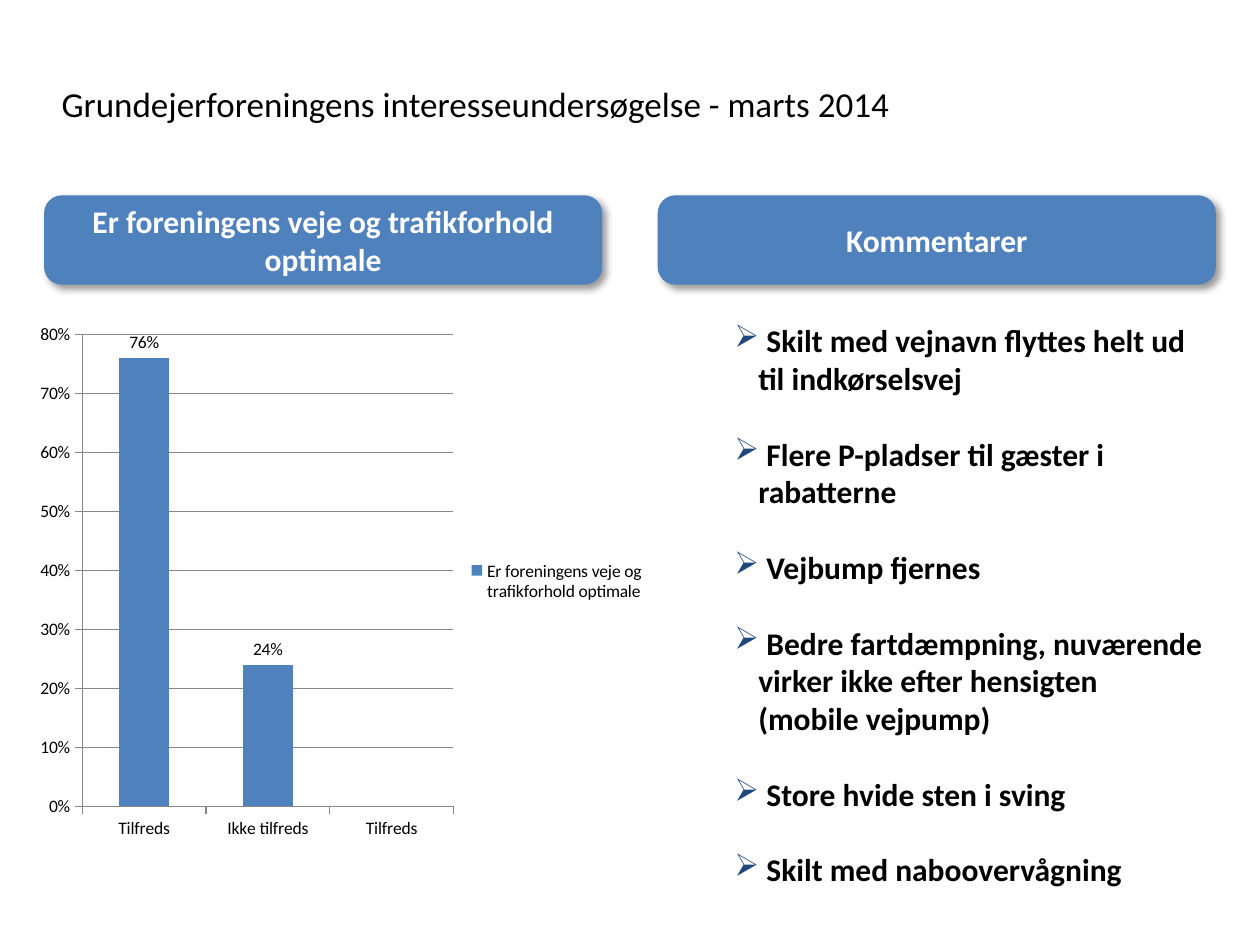
"""Build a survey slide with a column chart and a list of comments."""
from lxml.etree import SubElement
from pptx import Presentation
from pptx.chart.data import CategoryChartData
from pptx.dml.color import RGBColor
from pptx.enum.chart import XL_CHART_TYPE, XL_LABEL_POSITION, XL_LEGEND_POSITION, XL_TICK_MARK
from pptx.enum.shapes import MSO_SHAPE
from pptx.enum.text import MSO_ANCHOR, PP_ALIGN
from pptx.oxml.ns import qn
from pptx.util import Inches, Pt

TITLE = "Grundejerforeningens interesseundersøgelse - marts 2014"
QUESTION = "Er foreningens veje og trafikforhold optimale"
HEADINGS = [QUESTION, "Kommentarer"]
COMMENTS = [
    "Skilt med vejnavn flyttes helt ud til indkørselsvej",
    "Flere P-pladser til gæster i rabatterne",
    "Vejbump fjernes",
    "Bedre fartdæmpning, nuværende virker ikke efter hensigten (mobile vejpump)",
    "Store hvide sten i sving",
    "Skilt med naboovervågning",
]
ANSWERS = [("Tilfreds", 0.76), ("Ikke tilfreds", 0.24), ("Tilfreds", None)]
BLUE, NAVY, GRAY, BLACK, WHITE = "4F81BD", "1F497D", "878787", "000000", "FFFFFF"
HEADING_LEFT, HEADING_STEP = 0.35, 4.87


def rgb(color):
    """Turn a hex string into a colour."""
    return RGBColor.from_string(color)


def style(font, color=BLACK, **values):
    """Set font attributes and colour."""
    for name, value in {"name": "Calibri", **values}.items():
        setattr(font, name, value)
    font.color.rgb = rgb(color)


def add_text(slide, box, anchor=MSO_ANCHOR.TOP):
    """Add a wrapping text box and return its text frame."""
    tf = slide.shapes.add_textbox(*map(Inches, box)).text_frame
    tf.word_wrap = True
    tf.vertical_anchor = anchor
    return tf


def add_bullet(p):
    """Give a paragraph a hanging arrow bullet."""
    pPr = p._p.get_or_add_pPr()
    pPr.set("marL", str(Inches(0.19)))
    pPr.set("indent", str(-Inches(0.19)))
    SubElement(SubElement(pPr, qn("a:buClr")), qn("a:srgbClr"), val=NAVY)
    SubElement(pPr, qn("a:buChar"), char="➢")


def add_shadow(sp):
    """Give a shape a soft shadow to the lower right."""
    effects = SubElement(sp._element.spPr, qn("a:effectLst"))
    shadow = SubElement(effects, qn("a:outerShdw"), blurRad=str(Pt(4)), dist=str(Pt(3)),
                        dir="2700000", algn="tl", rotWithShape="0")
    SubElement(SubElement(shadow, qn("a:srgbClr"), val=BLACK), qn("a:alpha"), val="40000")


def add_heading(slide, left, text):
    """Add a rounded heading bar."""
    box = map(Inches, (left, 1.55, 4.43, 0.71))
    sp = slide.shapes.add_shape(MSO_SHAPE.ROUNDED_RECTANGLE, *box)
    sp.adjustments[0] = 0.2
    sp.fill.solid()
    sp.fill.fore_color.rgb = rgb(BLUE)
    sp.line.fill.background()
    add_shadow(sp)
    tf = sp.text_frame
    tf.word_wrap = True
    tf.vertical_anchor = MSO_ANCHOR.MIDDLE
    for side in ("left", "top", "right", "bottom"):
        setattr(tf, f"margin_{side}", Inches(0.04))
    p = tf.paragraphs[0]
    p.alignment = PP_ALIGN.CENTER
    r = p.add_run()
    r.text = text
    style(r.font, WHITE, size=Pt(18), bold=True)


def add_comments(slide):
    """Add the bulleted comments."""
    tf = add_text(slide, (5.73, 2.5, 3.92, 4.95))
    for i, comment in enumerate(COMMENTS):
        p = tf.add_paragraph() if i else tf.paragraphs[0]
        p.space_before = Pt(21.6 if i else 0)
        add_bullet(p)
        r = p.add_run()
        r.text = f" {comment}"
        style(r.font, size=Pt(18), bold=True)


def add_answers(slide):
    """Add the column chart of answers."""
    data = CategoryChartData(number_format="0%")
    data.categories = [name for name, _ in ANSWERS]
    data.add_series(QUESTION, [value for _, value in ANSWERS])
    box = map(Inches, (0.22, 2.49, 5, 4.25))
    chart = slide.shapes.add_chart(XL_CHART_TYPE.COLUMN_CLUSTERED, *box, data).chart
    style(chart.font, size=Pt(10))
    chart.has_title = False
    chart.has_legend = True
    chart.legend.position = XL_LEGEND_POSITION.RIGHT
    chart.legend.include_in_layout = False
    value_axis = chart.value_axis
    for name, value in {"minimum_scale": 0, "maximum_scale": 0.8, "major_unit": 0.1}.items():
        setattr(value_axis, name, value)
    value_axis.tick_labels.number_format = "0%"
    value_axis.tick_labels.number_format_is_linked = False
    for axis in (chart.category_axis, value_axis):
        axis.major_tick_mark = XL_TICK_MARK.OUTSIDE
        axis.format.line.color.rgb = rgb(GRAY)
    value_axis.major_gridlines.format.line.color.rgb = rgb(GRAY)
    plot = chart.plots[0]
    plot.gap_width = 150
    plot.vary_by_categories = False
    plot.has_data_labels = True
    labels = {"show_value": True, "number_format": "0%", "number_format_is_linked": False,
              "position": XL_LABEL_POSITION.OUTSIDE_END}
    for name, value in labels.items():
        setattr(plot.data_labels, name, value)
    fill = plot.series[0].format.fill
    fill.solid()
    fill.fore_color.rgb = rgb(BLUE)


def main():
    """Build and save the slide."""
    prs = Presentation()
    prs.slide_width, prs.slide_height = Inches(10), Inches(7.5)
    slide = prs.slides.add_slide(prs.slide_layouts[6])
    r = add_text(slide, (0.39, 0.37, 8.54, 0.9), MSO_ANCHOR.MIDDLE).paragraphs[0].add_run()
    r.text = TITLE
    style(r.font, size=Pt(20))
    add_comments(slide)
    for i, heading in enumerate(HEADINGS):
        add_heading(slide, HEADING_LEFT + i * HEADING_STEP, heading)
    add_answers(slide)
    prs.save("out.pptx")


if __name__ == "__main__":
    main()
